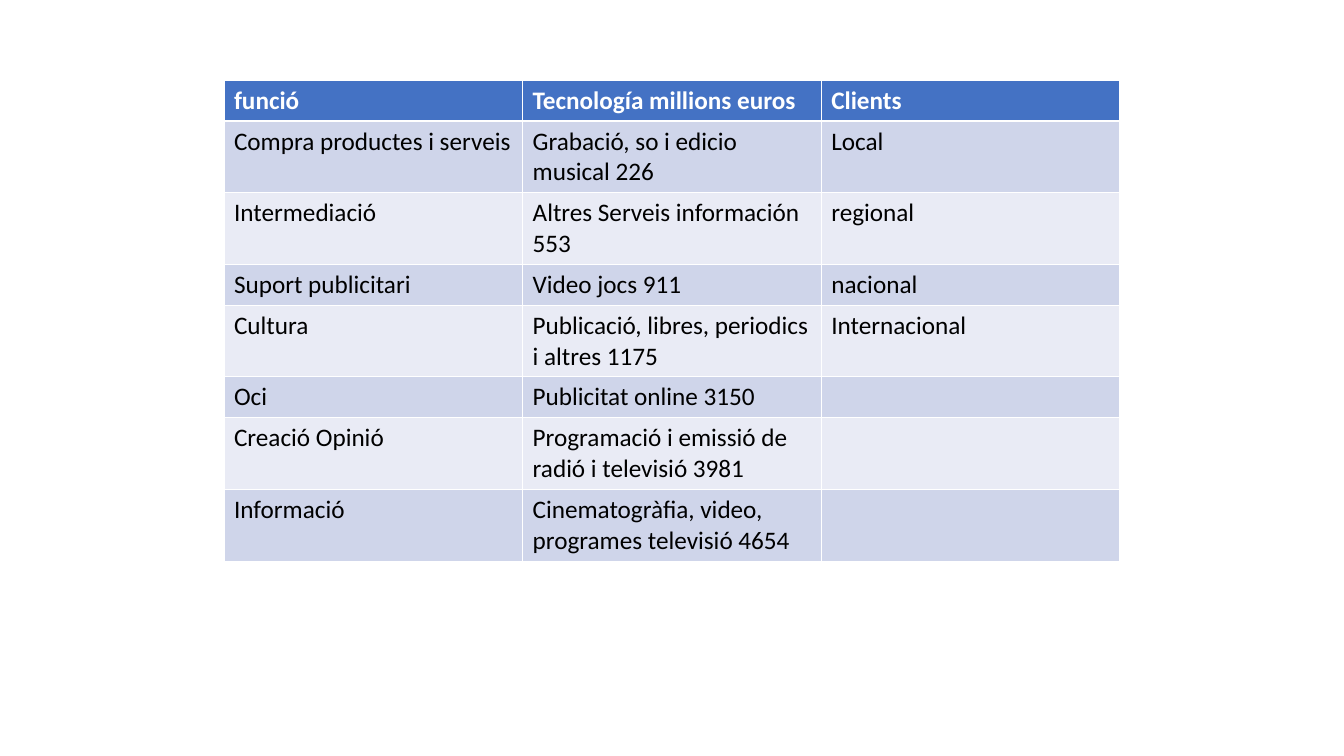
"""Build a slide with a table of functions, technology revenue and clients."""
from pptx import Presentation
from pptx.dml.color import RGBColor as Color
from pptx.util import Emu, Pt

EMU_PER_INCH = 914400
PX_PER_INCH = 100.8
BLANK_LAYOUT = 6

WHITE = RGB_WHITE = Color(0xFF, 0xFF, 0xFF)
BLACK = Color(0x00, 0x00, 0x00)
BLUE = Color(0x44, 0x72, 0xC4)
BAND_DARK = Color(0xCF, 0xD5, 0xEA)
BAND_LIGHT = Color(0xE9, 0xEB, 0xF5)

HEADER_FORMAT = {"name": "Calibri", "size": Pt(18), "bold": True}
BODY_FORMAT = {**HEADER_FORMAT, "bold": False}

ROWS = [
    ("funció", "Tecnología millions euros", "Clients"),
    ("Compra productes i serveis", "Grabació, so i edicio musical 226", "Local"),
    ("Intermediació", "Altres Serveis información 553", "regional"),
    ("Suport publicitari", "Video jocs 911", "nacional"),
    ("Cultura", "Publicació, libres, periodics i altres 1175", "Internacional"),
    ("Oci", "Publicitat online 3150", ""),
    ("Creació Opinió", "Programació i emissió de radió i televisió 3981", ""),
    ("Informació", "Cinematogràfia, video, programes televisió 4654", ""),
]


def px(length):
    return Emu(round(length * EMU_PER_INCH / PX_PER_INCH))


def fill_cell(cell, text, fill, color, font_format):
    cell.fill.solid()
    cell.fill.fore_color.rgb = fill
    if not text:
        return
    run = cell.text_frame.paragraphs[0].add_run()
    run.text = text
    for attribute, value in font_format.items():
        setattr(run.font, attribute, value)
    run.font.color.rgb = color


def row_style(index):
    if index == 0:
        return BLUE, WHITE, HEADER_FORMAT
    return (BAND_DARK if index % 2 else BAND_LIGHT), BLACK, BODY_FORMAT


def add_banded_table(slide, rows, left, top, width, row_height):
    frame = slide.shapes.add_table(
        len(rows), len(rows[0]), px(left), px(top), px(width), px(row_height * len(rows))
    )
    for index, texts in enumerate(rows):
        for cell, text in zip(frame.table.rows[index].cells, texts):
            fill_cell(cell, text, *row_style(index))


def main():
    presentation = Presentation()
    presentation.slide_width = px(1344)
    presentation.slide_height = px(756)
    slide = presentation.slides.add_slide(presentation.slide_layouts[BLANK_LAYOUT])
    add_banded_table(slide, ROWS, left=224, top=80, width=896, row_height=41)
    presentation.save("out.pptx")


if __name__ == "__main__":
    main()
